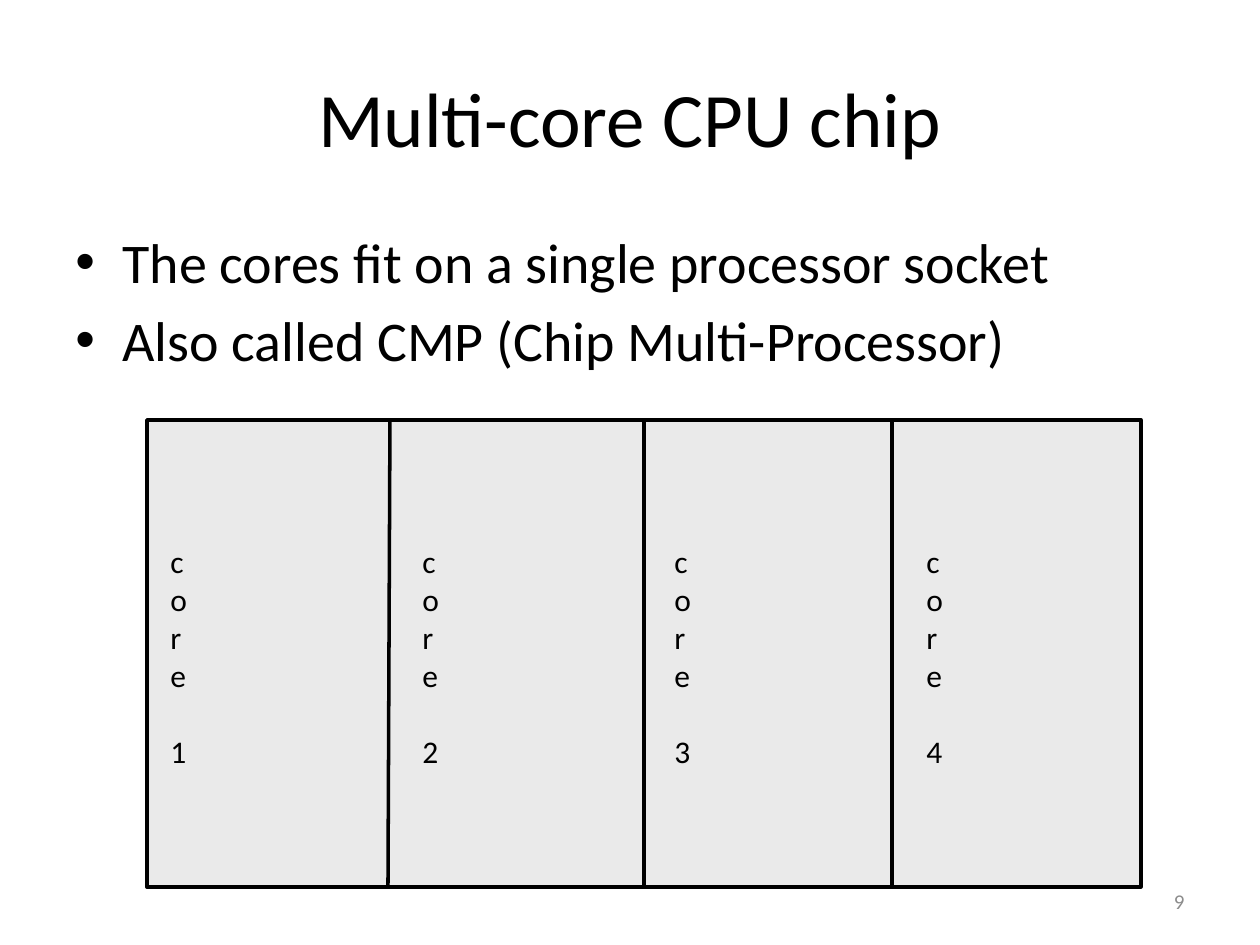
"""Build the slide about the cores of a multi-core CPU chip."""
from lxml.etree import SubElement
from pptx import Presentation
from pptx.dml.color import RGBColor
from pptx.enum.shapes import MSO_CONNECTOR, MSO_SHAPE
from pptx.enum.text import MSO_ANCHOR, PP_ALIGN
from pptx.oxml.ns import qn
from pptx.util import Emu, Pt

COLORS = {"text": "000000", "number": "8C8C8C", "chip": "EAEAEA", "line": "000000"}
SCALE = 914400 / 126


def px(value):
    return Emu(round(value * SCALE))


def add_text(page, lines, left, top, width, height, size=18, color="text",
             align=PP_ALIGN.LEFT, anchor=MSO_ANCHOR.TOP, gap=0, bullet=False):
    box = page.shapes.add_textbox(px(left), px(top), px(width), px(height))
    frame = box.text_frame
    frame.word_wrap = True
    frame.vertical_anchor = anchor
    for index, line in enumerate(lines):
        para = frame.add_paragraph() if index else frame.paragraphs[0]
        para.alignment = align
        para.space_before = Pt(gap if index else 0)
        span = para.add_run()
        span.text = line
        span.font.name = "Calibri"
        span.font.size = Pt(size)
        span.font.color.rgb = RGBColor.from_string(COLORS[color])
        if bullet:
            properties = para._p.get_or_add_pPr()
            properties.set("marL", str(px(47)))
            properties.set("indent", str(-px(47)))
            SubElement(properties, qn("a:buFont"), typeface="Arial")
            SubElement(properties, qn("a:buChar"), char="•")


deck = Presentation()
deck.slide_width, deck.slide_height = px(1260), px(945)
page = deck.slides.add_slide(deck.slide_layouts[6])

add_text(page, ["9"], 903, 876, 294, 50, size=12, color="number",
         align=PP_ALIGN.RIGHT, anchor=MSO_ANCHOR.MIDDLE)
add_text(page, ["Multi-core CPU chip"], 63, 38, 1134, 157, size=44,
         align=PP_ALIGN.CENTER, anchor=MSO_ANCHOR.MIDDLE)
add_text(page, ["The cores fit on a single processor socket",
                "Also called CMP (Chip Multi-Processor)"],
         63, 221, 1134, 624, size=32, gap=6.4, bullet=True)

chip = page.shapes.add_shape(MSO_SHAPE.RECTANGLE, px(147), px(420), px(994), px(467))
chip.shadow.inherit = False
chip.fill.solid()
chip.fill.fore_color.rgb = RGBColor.from_string(COLORS["chip"])
chip.line.color.rgb = RGBColor.from_string(COLORS["line"])
chip.line.width = Pt(2)

for core in range(4):
    add_text(page, ["core", str(core + 1)], 158 + 252 * core, 536, 45, 239, gap=22)

for start, end in [(644, 644), (390, 388), (892, 892)]:
    divider = page.shapes.add_connector(MSO_CONNECTOR.STRAIGHT,
                                        px(start), px(420), px(end), px(887))
    divider.line.color.rgb = RGBColor.from_string(COLORS["line"])
    divider.line.width = Pt(2)
    SubElement(divider._element.spPr, qn("a:effectLst"))

deck.save("out.pptx")
